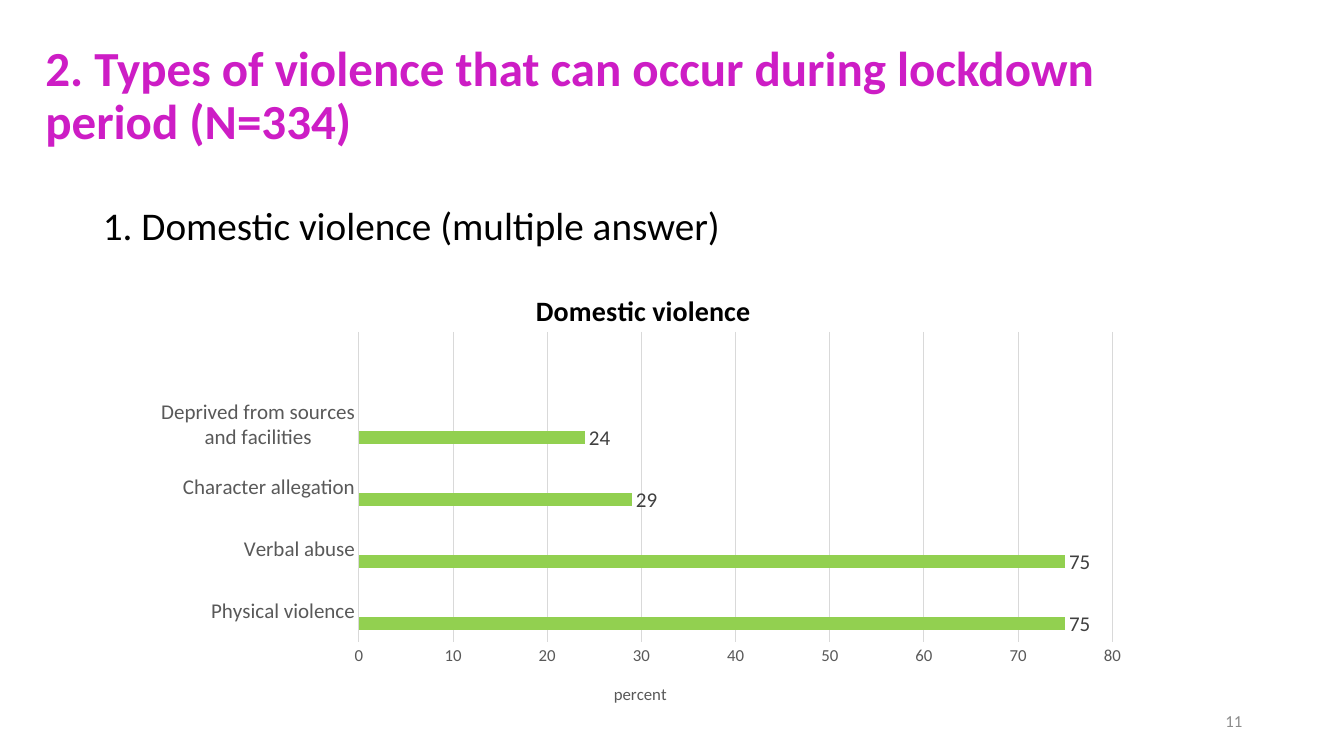
import dataclasses
import typing

import pptx
import pptx.chart.data
import pptx.dml.color
import pptx.enum.chart
import pptx.enum.text
import pptx.oxml
import pptx.oxml.ns
import pptx.util

INK = {
    "title": "CD1DC5",
    "text": "000000",
    "axis": "595959",
    "label": "404040",
    "grid": "D9D9D9",
    "page": "8C8C8C",
}
FACE = "Calibri"
TYPES = ["Physical violence", "Verbal abuse", "Character allegation",
         "Deprived from sources and facilities", ""]


@dataclasses.dataclass
class Block:
    text: str
    box: tuple[float, float, float, float]
    size: float
    ink: str
    bold: bool
    frame: dict[str, typing.Any]
    para: dict[str, typing.Any]


@dataclasses.dataclass
class Series:
    name: str
    vals: list[int | None]
    fill: str
    size: float


ALIGN = pptx.enum.text.PP_ALIGN
ANCHOR = pptx.enum.text.MSO_ANCHOR
FIT = pptx.enum.text.MSO_AUTO_SIZE
TITLE = Block("2. Types of violence that can occur during lockdown period (N=334)",
              (0.35, 0.24, 11.5, 1.45), 35, "title", True,
              {"vertical_anchor": ANCHOR.MIDDLE},
              {"alignment": ALIGN.LEFT, "line_spacing": 0.9})
BODY = Block("1. Domestic violence (multiple answer)",
             (0.92, 2, 11.5, 4.76), 28, "text", False,
             {"vertical_anchor": ANCHOR.TOP},
             {"line_spacing": 0.9, "space_before": pptx.util.Pt(10)})
PAGE = Block("11", (9.42, 6.95, 3, 0.4), 12, "page", False,
             {"vertical_anchor": ANCHOR.MIDDLE}, {"alignment": ALIGN.RIGHT})
SERIES = [
    Series("Series 1", [75, 75, 29, 24, None], "92D050", 15),
    Series("Series 2", [None] * 5, "ED7D31", 12),
    Series("Series 3", [None] * 5, "A5A5A5", 12),
]


def put(item: typing.Any, vals: dict[str, typing.Any]) -> None:
    for key, val in vals.items():
        setattr(item, key, val)


def rgb(code: str) -> pptx.dml.color.RGBColor:
    return pptx.dml.color.RGBColor.from_string(code)


def style(font: typing.Any, size: float, ink: str, bold: bool = False) -> None:
    put(font, {"name": FACE, "size": pptx.util.Pt(size), "bold": bold})
    font.color.rgb = rgb(INK[ink])


def rule(line: typing.Any) -> None:
    line.color.rgb = rgb(INK["grid"])
    line.width = pptx.util.Pt(0.75)


def write(shape: typing.Any, block: Block) -> None:
    sides = map(pptx.util.Inches, block.box)
    put(shape, dict(zip(("left", "top", "width", "height"), sides)))
    frame = shape.text_frame
    put(frame, {"word_wrap": True, "auto_size": FIT.NONE} | block.frame)
    para = frame.paragraphs[0]
    put(para, block.para)
    run = para.add_run()
    run.text = block.text
    style(run.font, block.size, block.ink, block.bold)


def place(node: typing.Any, index: int, parts: dict[str, typing.Any]) -> None:
    qn = pptx.oxml.ns.qn
    old = node.find(qn("c:layout"))
    if old is not None:
        node.remove(old)
    inner = "".join(f'<c:{key} val="{val}"/>' for key, val in parts.items())
    space = pptx.oxml.ns.nsdecls("c")
    node.insert(index, pptx.oxml.parse_xml(
        f"<c:layout {space}><c:manualLayout>{inner}</c:manualLayout></c:layout>"))


def head(title: typing.Any, node: typing.Any, text: str, size: float,
         ink: str, bold: bool, spot: tuple[float, float]) -> None:
    run = title.text_frame.paragraphs[0].add_run()
    run.text = text
    style(run.font, size, ink, bold)
    place(node, 1, {"xMode": "edge", "yMode": "edge", "x": spot[0], "y": spot[1]})


def plot(slide: typing.Any) -> None:
    enum = pptx.enum.chart
    data = pptx.chart.data.CategoryChartData()
    data.categories = TYPES
    for item in SERIES:
        data.add_series(item.name, item.vals)
    box = map(pptx.util.Inches, (1.4, 2.61, 9.91, 4.59))
    chart = slide.shapes.add_chart(enum.XL_CHART_TYPE.BAR_CLUSTERED, *box, data).chart
    style(chart.font, 10, "text")
    put(chart, {"has_legend": False, "has_title": True})
    bars = chart.plots[0]
    put(bars, {"gap_width": 182, "overlap": 0, "vary_by_categories": False})
    for item, bar in zip(SERIES, bars.series):
        bar.format.fill.solid()
        bar.format.fill.fore_color.rgb = rgb(item.fill)
        tags = bar.data_labels
        put(tags, {"show_value": True, "position": enum.XL_LABEL_POSITION.OUTSIDE_END})
        style(tags.font, item.size, "label")

    cats, vals = chart.category_axis, chart.value_axis
    none = enum.XL_TICK_MARK.NONE
    for axis, size in ((cats, 15), (vals, 12)):
        put(axis, {"major_tick_mark": none, "minor_tick_mark": none})
        style(axis.tick_labels.font, size, "axis")
    cats.has_major_gridlines = False
    rule(cats.format.line)
    put(vals, {"minimum_scale": 0, "maximum_scale": 80, "major_unit": 10,
               "has_major_gridlines": True, "has_title": True})
    vals.format.line.fill.background()
    rule(vals.major_gridlines.format.line)

    root = chart.element
    head(chart.chart_title, root.xpath("c:chart/c:title")[0],
         "Domestic violence", 20, "text", True, (0.39, 0.05))
    head(vals.axis_title, root.xpath(".//c:valAx/c:title")[0],
         "percent", 12, "axis", False, (0.47, 0.9))
    place(root.xpath(".//c:plotArea")[0], 0, {
        "layoutTarget": "inner", "xMode": "edge", "yMode": "edge",
        "x": 0.218, "y": 0.149, "w": 0.754, "h": 0.67})


def main() -> None:
    deck = pptx.Presentation()
    put(deck, {"slide_width": pptx.util.Inches(13.33),
               "slide_height": pptx.util.Inches(7.5)})
    slide = deck.slides.add_slide(deck.slide_layouts[1])
    write(slide.shapes.title, TITLE)
    body = slide.placeholders[1]
    write(body, BODY)
    props = body.text_frame.paragraphs[0]._p.get_or_add_pPr()
    for key in ("marL", "indent"):
        props.set(key, "0")
    props.append(pptx.oxml.parse_xml(
        f"<a:buNone {pptx.oxml.ns.nsdecls('a')}/>"))
    plot(slide)
    write(slide.shapes.add_textbox(0, 0, 0, 0), PAGE)
    deck.save("out.pptx")


if __name__ == "__main__":
    main()
